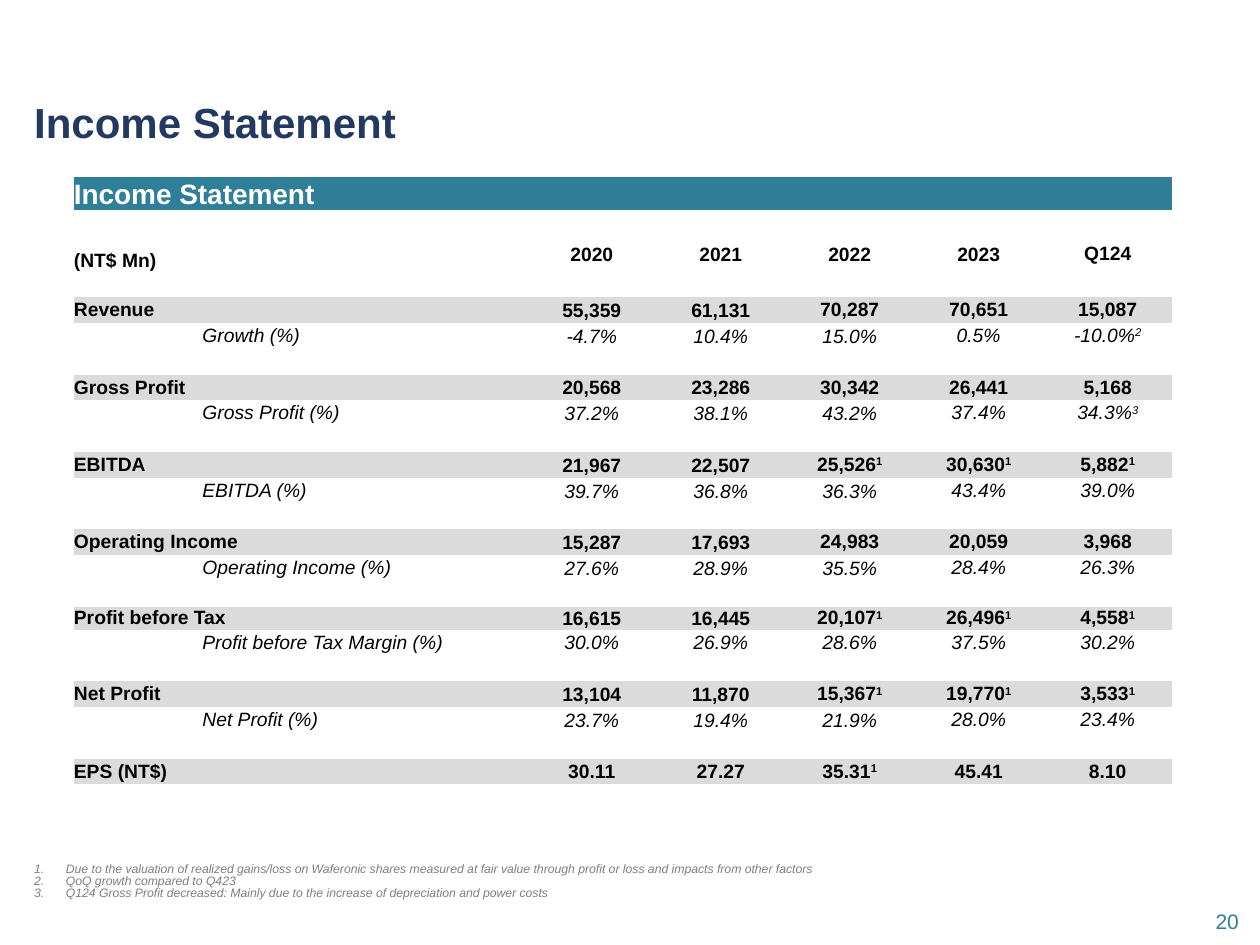
"""Build the income statement slide."""
import pptx
import pptx.dml.color
import pptx.enum.text
import pptx.oxml.ns
import pptx.util
from lxml import etree

Cm, Pt = pptx.util.Cm, pptx.util.Pt
ANCHOR = pptx.enum.text.MSO_ANCHOR
CENTER = pptx.enum.text.PP_ALIGN.CENTER
qn = pptx.oxml.ns.qn
TEAL, GRAY = "307F98", "DBDBDB"
NO_STYLE = "{2D5ABB26-0587-4C30-8999-92F81FD0307C}"


def color(value):
    return pptx.dml.color.RGBColor.from_string(value)


def add_run(paragraph, text, size, fill, bold=False, italic=False):
    run = paragraph.add_run()
    run.text = text
    run.font.name = "Arial"
    run.font.size = Pt(size)
    run.font.bold = bold
    run.font.italic = italic
    run.font.color.rgb = color(fill)
    return run


presentation = pptx.Presentation()
presentation.slide_width = Cm(25.4)
presentation.slide_height = Cm(19.05)
slide = presentation.slides.add_slide(presentation.slide_layouts[5])

title = slide.shapes.title
title.left, title.top, title.width, title.height = Cm(0.69), Cm(0.53), Cm(16.61), Cm(2.44)
frame = title.text_frame
frame.auto_size = pptx.enum.text.MSO_AUTO_SIZE.NONE
frame.vertical_anchor = ANCHOR.BOTTOM
frame.margin_left = frame.margin_right = frame.margin_top = frame.margin_bottom = 0
paragraph = frame.paragraphs[0]
paragraph.alignment = pptx.enum.text.PP_ALIGN.LEFT
paragraph.line_spacing = 1.2
add_run(paragraph, "Income Statement", 24, "233960", bold=True)

years = ["2020", "2021", "2022", "2023", "Q124"]
statement = [
    ("Revenue", "55,359 61,131 70,287 70,651 15,087",
     "Growth (%)", "-4.7% 10.4% 15.0% 0.5% -10.0%^2"),
    ("Gross Profit", "20,568 23,286 30,342 26,441 5,168",
     "Gross Profit (%)", "37.2% 38.1% 43.2% 37.4% 34.3%^3"),
    ("EBITDA", "21,967 22,507 25,526^1 30,630^1 5,882^1",
     "EBITDA (%)", "39.7% 36.8% 36.3% 43.4% 39.0%"),
    ("Operating Income", "15,287 17,693 24,983 20,059 3,968",
     "Operating Income (%)", "27.6% 28.9% 35.5% 28.4% 26.3%"),
    ("Profit before Tax", "16,615 16,445 20,107^1 26,496^1 4,558^1",
     "Profit before Tax Margin (%)", "30.0% 26.9% 28.6% 37.5% 30.2%"),
    ("Net Profit", "13,104 11,870 15,367^1 19,770^1 3,533^1",
     "Net Profit (%)", "23.7% 19.4% 21.9% 28.0% 23.4%"),
    ("EPS (NT$)", "30.11 27.27 35.31^1 45.41 8.10", None, None),
]
rows = [("title", "Income Statement", []), ("gap", "", []),
        ("header", "(NT$ Mn)", years), ("gap", "", [])]
for name, amounts, ratio_name, ratios in statement:
    rows.append(("total", name, amounts.split()))
    if ratio_name:
        rows += [("ratio", ratio_name, ratios.split()), ("gap", "", [])]

column_widths = [2.59, 4.72, 1.83] + [2.6] * len(years)
row_heights = [0.67, 0.52, 0.71] + [0.52] * (len(rows) - 3)
row_heights[16] = 0.23
table = slide.shapes.add_table(
    len(rows), len(column_widths), Cm(1.49), Cm(3.57),
    Cm(sum(column_widths)), Cm(sum(row_heights))).table
table.first_row = table.horz_banding = False
table._tbl.tblPr.find(qn("a:tableStyleId")).text = NO_STYLE
for column, width in zip(table.columns, column_widths):
    column.width = Cm(width)

fills = {"title": TEAL, "total": GRAY}
padded_columns = {"header": 4, "total": 2, "ratio": 3}
wide_labels = ("Income Statement", "Gross Profit", "Operating Income", "Profit before Tax")
for row_index, (kind, label, values) in enumerate(rows):
    table.rows[row_index].height = Cm(row_heights[row_index])
    label_column = 1 if kind == "ratio" else 0
    texts = [""] * label_column + [label]
    texts += [""] * (3 - len(texts)) + (values or [""] * len(years))
    for column_index, text in enumerate(texts):
        cell = table.cell(row_index, column_index)
        padding = Cm(0.03) if values and 0 <= column_index - 3 < padded_columns[kind] else 0
        cell.margin_left = cell.margin_right = cell.margin_top = padding
        cell.margin_bottom = 0
        is_low = kind == "title" or label == "(NT$ Mn)" and column_index == 0
        cell.vertical_anchor = ANCHOR.BOTTOM if is_low else ANCHOR.MIDDLE
        if kind in fills:
            cell.fill.solid()
            cell.fill.fore_color.rgb = color(fills[kind])
        else:
            cell.fill.background()
        paragraph = cell.text_frame.paragraphs[0]
        if not text:
            etree.SubElement(paragraph._p, qn("a:endParaRPr"), sz="1100")
            continue
        if column_index > 2:
            paragraph.alignment = CENTER
        size, ink = (16, "FFFFFF") if kind == "title" else (11, "000000")
        is_ratio = kind == "ratio"
        main, _, note = text.partition("^")
        add_run(paragraph, main, size, ink, not is_ratio, is_ratio)
        if note:
            mark = add_run(paragraph, note, size, ink, not is_ratio, is_ratio)
            mark.font._element.set("baseline", "30000")
    if kind in ("title", "header", "total", "ratio"):
        is_wide = label in wide_labels or is_ratio and label != "Growth (%)"
        last_column = 2 if is_wide else 1
        if last_column > label_column:
            table.cell(row_index, label_column).merge(table.cell(row_index, last_column))

footnotes = [
    "Due to the valuation of realized gains/loss on Waferonic shares measured at fair value "
    "through profit or loss and impacts from other factors",
    "QoQ growth compared to Q423",
    "Q124 Gross Profit decreased: Mainly due to the increase of depreciation and power costs",
]
frame = slide.shapes.add_textbox(Cm(0.69), Cm(16.87), Cm(24.71), Cm(1.27)).text_frame
frame.word_wrap = True
frame.vertical_anchor = ANCHOR.BOTTOM
frame.margin_left = frame.margin_right = frame.margin_top = frame.margin_bottom = 0
for index, footnote in enumerate(footnotes):
    paragraph = frame.add_paragraph() if index else frame.paragraphs[0]
    paragraph.line_spacing = 0.8
    properties = paragraph._p.get_or_add_pPr()
    properties.set("marL", str(Cm(0.64)))
    properties.set("indent", str(-Cm(0.64)))
    etree.SubElement(properties, qn("a:buFont"), typeface="+mj-lt")
    etree.SubElement(properties, qn("a:buAutoNum"), type="arabicPeriod")
    add_run(paragraph, footnote, 7, "7F7F7F", italic=True)

frame = slide.shapes.add_textbox(Cm(23.98), Cm(17.93), Cm(1.52), Cm(1.27)).text_frame
frame.word_wrap = True
frame.vertical_anchor = ANCHOR.MIDDLE
frame.paragraphs[0].alignment = CENTER
add_run(frame.paragraphs[0], "20", 12, TEAL)

presentation.save("out.pptx")
